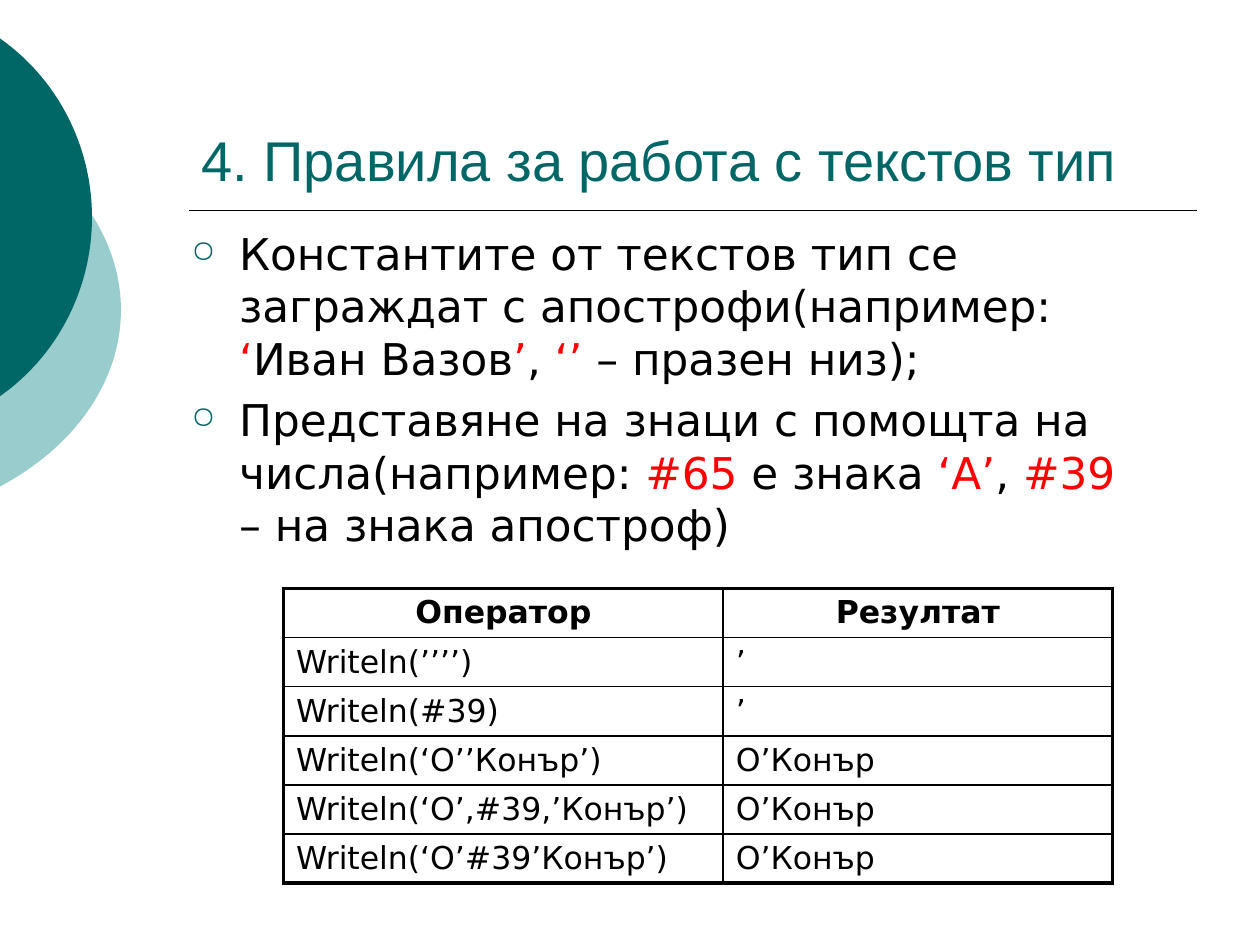
from dataclasses import dataclass

from lxml import etree
from pptx import Presentation
from pptx.dml.color import RGBColor
from pptx.enum.shapes import MSO_CONNECTOR, MSO_SHAPE
from pptx.enum.text import MSO_ANCHOR, PP_ALIGN
from pptx.oxml.ns import qn
from pptx.util import Inches, Pt

STRAIGHT, OVAL = MSO_CONNECTOR.STRAIGHT, MSO_SHAPE.OVAL
BOTTOM, TOP = MSO_ANCHOR.BOTTOM, MSO_ANCHOR.TOP
LEFT, CENTER = PP_ALIGN.LEFT, PP_ALIGN.CENTER


@dataclass(frozen=True)
class Theme:
    teal: str = "006666"
    pale_teal: str = "99CCCC"
    ink: str = "000000"
    accent: str = "FF0000"
    heading_font: str = "Arial"
    body_font: str = "DejaVu Sans"
    bullet_font: str = "OpenSymbol"
    heading_size: int = 32
    body_size: int = 25
    table_size: int = 18
    thin: float = 1
    thick: float = 2.25


THEME = Theme()

TITLE = "4. Правила за работа с текстов тип"
RULES = [
    [
        ("Константите от текстов тип се заграждат с апострофи(например: ", False),
        ("‘", True), ("Иван Вазов", False), ("’", True), (",", False),
        (" ‘’ ", True), ("– празен низ);", False),
    ],
    [
        ("Представяне на знаци с помощта на числа(например: ", False),
        ("#65", True), (" е знака ", False), ("‘А’", True), (",", False),
        (" #39", True), (" – на знака апостроф)", False),
    ],
]
EXAMPLES = [
    ("Оператор", "Резултат"),
    ("Writeln(’’’’)", "’"),
    ("Writeln(#39)", "’"),
    ("Writeln(‘О’’Конър’)", "О’Конър"),
    ("Writeln(‘О’,#39,’Конър’)", "О’Конър"),
    ("Writeln(‘О’#39’Конър’)", "О’Конър"),
]
COLUMN_WIDTHS = (3.49, 3.09)
ROW_HEIGHT = 0.39


def write(paragraph, text, *, font=THEME.body_font, size=THEME.body_size,
          color=THEME.ink, bold=False):
    run = paragraph.add_run()
    run.text = text
    run.font.name = font
    run.font.size = Pt(size)
    run.font.bold = bold
    run.font.color.rgb = RGBColor.from_string(color)


def add_frame(slide, left, top, width, height, anchor=TOP):
    frame = slide.shapes.add_textbox(
        Inches(left), Inches(top), Inches(width), Inches(height)).text_frame
    frame.word_wrap = True
    frame.vertical_anchor = anchor
    return frame


def add_disc(slide, left, top, width, height, color):
    disc = slide.shapes.add_shape(
        OVAL, Inches(left), Inches(top), Inches(width), Inches(height))
    disc.shadow.inherit = False
    disc.fill.solid()
    disc.fill.fore_color.rgb = RGBColor.from_string(color)
    disc.line.fill.background()


def add_rule_line(slide, left, right, y):
    divider = slide.shapes.add_connector(
        STRAIGHT, Inches(left), Inches(y), Inches(right), Inches(y))
    divider.line.color.rgb = RGBColor.from_string(THEME.ink)
    divider.line.width = Pt(THEME.thin)
    etree.SubElement(divider._element.spPr, qn("a:effectLst"))


def add_bullet(paragraph):
    paragraph.space_before = Pt(THEME.body_size * 0.2)
    properties = paragraph._p.get_or_add_pPr()
    properties.set("marL", str(Inches(0.38)))
    properties.set("indent", str(Inches(-0.38)))
    color = etree.SubElement(properties, qn("a:buClr"))
    etree.SubElement(color, qn("a:srgbClr"), val=THEME.teal)
    etree.SubElement(properties, qn("a:buSzPct"), val="70000")
    etree.SubElement(properties, qn("a:buFont"), typeface=THEME.bullet_font)
    etree.SubElement(properties, qn("a:buChar"), char="○")


def set_borders(cell, outer_sides):
    properties = cell._tc.get_or_add_tcPr()
    for side in "LRTB":
        width = THEME.thick if side in outer_sides else THEME.thin
        border = etree.SubElement(properties, qn(f"a:ln{side}"), w=str(Pt(width)))
        fill = etree.SubElement(border, qn("a:solidFill"))
        etree.SubElement(fill, qn("a:srgbClr"), val=THEME.ink)


def add_examples(slide, left, top):
    table = slide.shapes.add_table(
        len(EXAMPLES), len(COLUMN_WIDTHS), Inches(left), Inches(top),
        Inches(sum(COLUMN_WIDTHS)), Inches(ROW_HEIGHT * len(EXAMPLES))).table
    table.first_row = table.horz_banding = False
    for column, width in zip(table.columns, COLUMN_WIDTHS):
        column.width = Inches(width)
    last_row, last_column = len(EXAMPLES) - 1, len(COLUMN_WIDTHS) - 1
    for row, values in enumerate(EXAMPLES):
        table.rows[row].height = Inches(ROW_HEIGHT)
        for column, value in enumerate(values):
            cell = table.cell(row, column)
            edges = {"L": column == 0, "R": column == last_column,
                     "T": row == 0, "B": row == last_row}
            set_borders(cell, [side for side, outer in edges.items() if outer])
            cell.fill.background()
            cell.margin_top, cell.margin_bottom = Inches(0.05), Inches(0.03)
            paragraph = cell.text_frame.paragraphs[0]
            paragraph.alignment = CENTER if row == 0 else LEFT
            write(paragraph, value, size=THEME.table_size, bold=row == 0)


def main():
    deck = Presentation()
    deck.slide_width, deck.slide_height = Inches(10), Inches(7.5)
    slide = deck.slides.add_slide(deck.slide_layouts[6])

    add_disc(slide, -3.54, 0.75, 4.5, 3.42, THEME.pale_teal)
    add_disc(slide, -2.65, 0, 3.38, 3.45, THEME.teal)
    add_rule_line(slide, 1.5, 9.5, 1.67)

    heading = add_frame(slide, 1.5, 0.33, 8, 1.25, BOTTOM)
    write(heading.paragraphs[0], TITLE, font=THEME.heading_font,
          size=THEME.heading_size, color=THEME.teal)

    body = add_frame(slide, 1.42, 1.75, 7.75, 2.83)
    for index, rule in enumerate(RULES):
        paragraph = body.add_paragraph() if index else body.paragraphs[0]
        add_bullet(paragraph)
        for text, highlighted in rule:
            write(paragraph, text, color=THEME.accent if highlighted else THEME.ink)

    add_examples(slide, 2.25, 4.67)
    deck.save("out.pptx")


if __name__ == "__main__":
    main()
